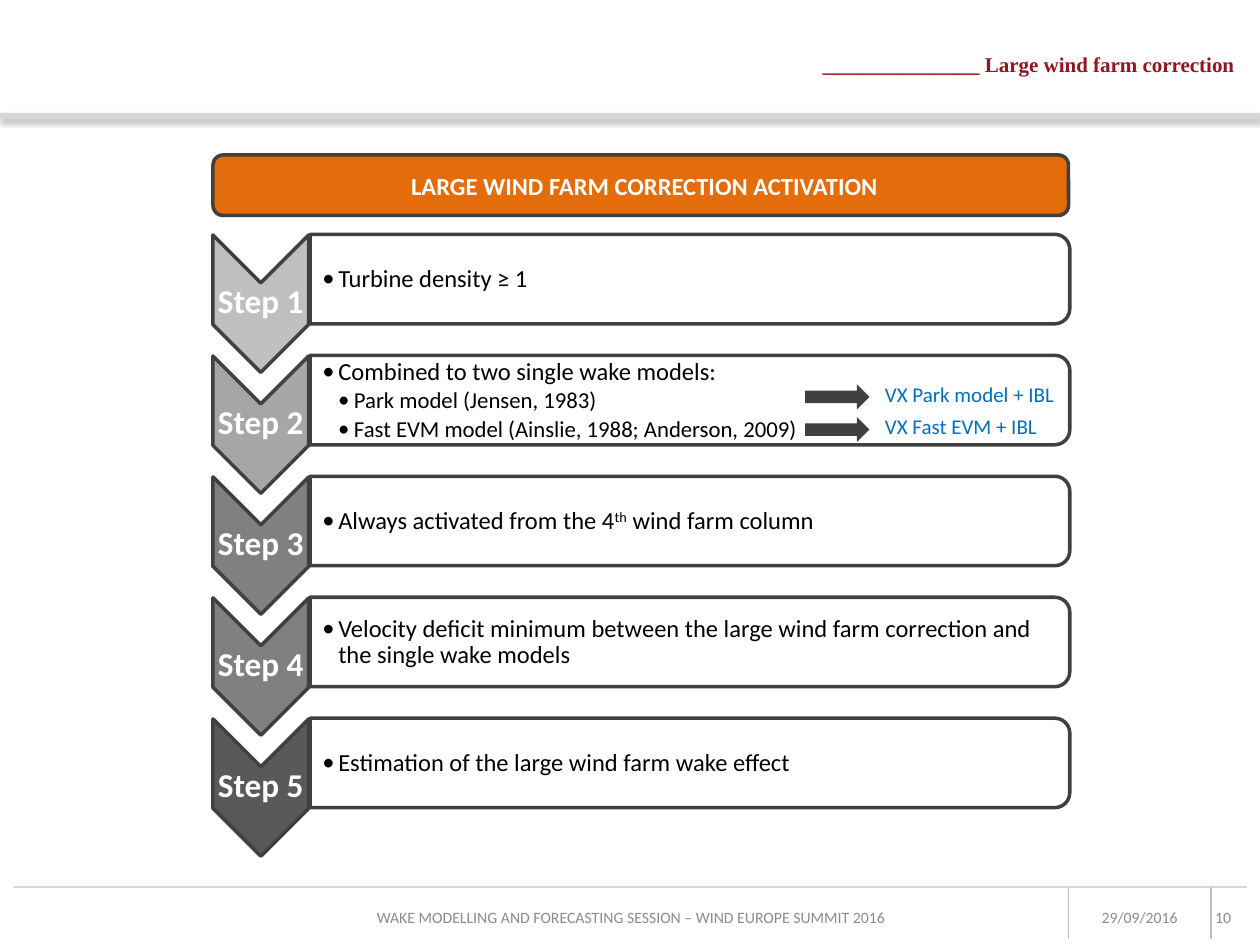
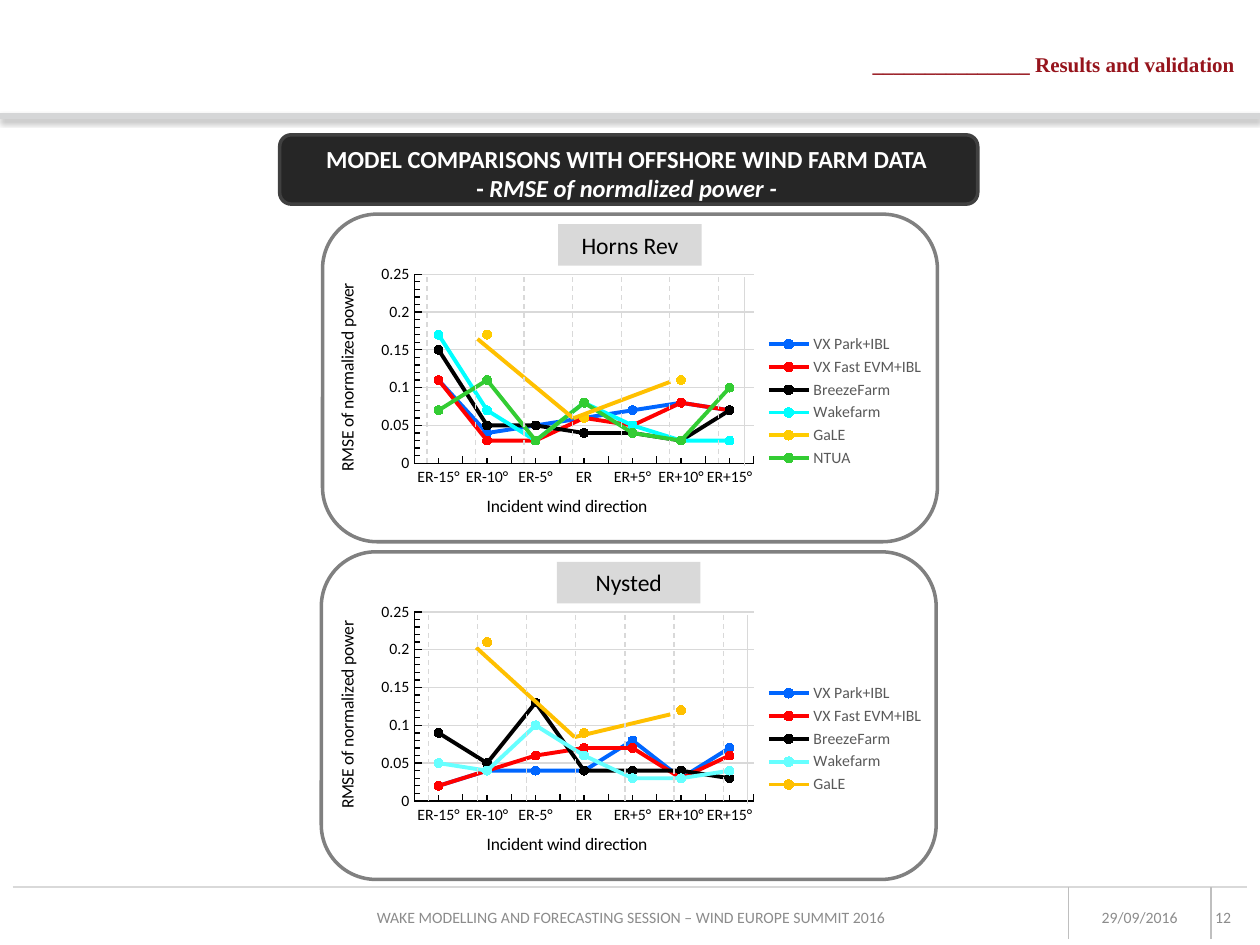
import pptx
import pptx.chart.data
import pptx.dml.color
import pptx.enum.chart
import pptx.enum.dml
import pptx.enum.shapes
import pptx.enum.text
import pptx.oxml
import pptx.oxml.ns
import pptx.util
from lxml import etree

Pt = pptx.util.Pt
RGB = pptx.dml.color.RGBColor.from_string
qn = pptx.oxml.ns.qn
SHAPES = pptx.enum.shapes.MSO_SHAPE
ALIGN = pptx.enum.text.PP_ALIGN
ANCHOR = pptx.enum.text.MSO_ANCHOR
TICKS = pptx.enum.chart.XL_TICK_MARK

COLORS = {
    "band": "D5D6D7", "rule": "D9D9D9", "divider": "BFBFBF", "footer": "8C8C8C",
    "heading": "96141C", "orange": "E46C0A", "edge": "404040", "dark": "262626",
    "white": "FFFFFF", "black": "000000", "blue": "0070C0", "frame": "808080",
    "legend": "595959", "amber": "FFC000",
}

deck = pptx.Presentation()
deck.slide_width = pptx.util.Inches(10)
deck.slide_height = pptx.util.Inches(7.5)
COL = deck.slide_width / 100
ROW = deck.slide_height / 75


def add_box(slide, kind, box, fill=None, edge=None, text="", size=14, color="black",
            bold=False, font="Calibri", align=ALIGN.CENTER, anchor=ANCHOR.TOP, inset=None):
    left, top, width, height = box
    place = [int(left * COL), int(top * ROW), int(width * COL), int(height * ROW)]
    if kind is None:
        shape = slide.shapes.add_textbox(*place)
    else:
        shape = slide.shapes.add_shape(kind, *place)
        shape.shadow.inherit = False
        if fill:
            shape.fill.solid()
            shape.fill.fore_color.rgb = RGB(fill)
        else:
            shape.fill.background()
        if edge:
            shape.line.color.rgb = RGB(edge)
            shape.line.width = Pt(2)
        else:
            shape.line.fill.background()
    frame = shape.text_frame
    frame.word_wrap = True
    frame.vertical_anchor = anchor
    if inset is not None:
        frame.margin_left = frame.margin_right = int(inset * COL)
        frame.margin_top = frame.margin_bottom = int(inset * ROW)
    if text:
        frame.text = text
        for paragraph in frame.paragraphs:
            paragraph.alignment = align
            paragraph.font.name = font
            paragraph.font.size = Pt(size)
            paragraph.font.bold = bold
            paragraph.font.color.rgb = RGB(COLORS[color])
    return shape


def add_line(slide, x1, y1, x2, y2, color, weight, dashed=False):
    line = slide.shapes.add_connector(
        pptx.enum.shapes.MSO_CONNECTOR.STRAIGHT,
        int(x1 * COL), int(y1 * ROW), int(x2 * COL), int(y2 * ROW))
    line.line.color.rgb = RGB(COLORS[color])
    line.line.width = Pt(weight)
    if dashed:
        line.line.dash_style = pptx.enum.dml.MSO_LINE.DASH
    return etree.SubElement(line._element.spPr, qn("a:effectLst"))


slides = []
for heading, number in [("Large wind farm correction", "10"), ("Results and validation", "12")]:
    slide = deck.slides.add_slide(deck.slide_layouts[6])
    slides.append(slide)
    effects = add_line(slide, 0, 9.2, 100, 9.2, "band", 3)
    shadow = etree.SubElement(effects, qn("a:outerShdw"), blurRad=str(Pt(3.1)),
                              dist=str(Pt(1.8)), dir="5400000", rotWithShape="0")
    tint = etree.SubElement(shadow, qn("a:srgbClr"), val=COLORS["black"])
    etree.SubElement(tint, qn("a:alpha"), val="35000")
    add_line(slide, 1, 70.4, 99, 70.4, "rule", 1)
    for divider in (84.8, 96.1):
        add_line(slide, divider, 70.4, divider, 74.5, "divider", 1)
    for text, left, width, align in [
        ("WAKE MODELLING AND FORECASTING SESSION – WIND EUROPE SUMMIT 2016", 28.2, 43.7, ALIGN.CENTER),
        ("29/09/2016", 86, 8.9, ALIGN.CENTER),
        (number, 95.1, 3.6, ALIGN.RIGHT),
    ]:
        add_box(slide, None, (left, 71.3, width, 3), text=text, size=9, color="footer",
                align=align, anchor=ANCHOR.MIDDLE)
    add_box(slide, None, (51.2, 3.6, 47.8, 3), text="_" * 15 + " " + heading, size=12,
            color="heading", bold=True, font="Times New Roman", align=ALIGN.RIGHT)

correction, results = slides

add_box(correction, SHAPES.ROUNDED_RECTANGLE, (16.9, 12.3, 67.9, 4.8), COLORS["orange"], COLORS["edge"])
add_box(correction, SHAPES.RECTANGLE, (18.2, 13.1, 65.9, 3.4), COLORS["orange"],
        text="LARGE WIND FARM CORRECTION ACTIVATION", color="white", bold=True)

steps = [
    ("BFBFBF", ["Turbine density ≥ 1"]),
    ("A6A6A6", ["Combined to two single wake models:", "Park model (Jensen, 1983)",
                "Fast EVM model (Ainslie, 1988; Anderson, 2009)"]),
    ("808080", ["Always activated from the 4^th^ wind farm column"]),
    ("808080", ["Velocity deficit minimum between the large wind farm correction and the single wake models"]),
    ("595959", ["Estimation of the large wind farm wake effect"]),
]
for index, (shade, points) in enumerate(steps):
    top = 18.6 + 9.6 * index
    chevron = add_box(correction, SHAPES.CHEVRON, (15.25, top + 1.7, 10.9, 7.6), shade, COLORS["edge"])
    chevron.rotation = 90
    add_box(correction, None, (16.9, top + 3.6, 7.6, 3.3), text=f"Step {index + 1}", size=19,
            color="white", bold=True, anchor=ANCHOR.MIDDLE, inset=0.1)
    panel = add_box(correction, SHAPES.ROUND_2_SAME_RECTANGLE, (51.2, top - 26.6, 7.1, 60.3),
                    COLORS["white"], COLORS["edge"])
    panel.rotation = 90
    body = add_box(correction, None, (24.5, top + 0.4, 60, 6.4), anchor=ANCHOR.MIDDLE, inset=0.1).text_frame
    body.margin_left = int(1.1 * COL)
    for depth, point in enumerate(points):
        nested = depth > 0
        paragraph = body.add_paragraph() if nested else body.paragraphs[0]
        paragraph.line_spacing = 0.9
        paragraph.space_after = Pt(2)
        props = paragraph._p.get_or_add_pPr()
        props.set("marL", str(int((2.5 if nested else 1.25) * COL)))
        props.set("indent", str(int(-1.25 * COL)))
        etree.SubElement(props, qn("a:buFont"), typeface="Calibri")
        etree.SubElement(props, qn("a:buChar"), char="•")
        paragraph.font.name = "Calibri"
        paragraph.font.size = Pt(13 if nested else 14)
        paragraph.font.color.rgb = RGB(COLORS["black"])
        for part, words in enumerate(point.split("^")):
            run = paragraph.add_run()
            run.text = words
            if part == 1:
                run.font._element.set("baseline", "30000")

for index, combined in enumerate(["VX Park model + IBL", "VX Fast EVM + IBL"]):
    add_box(correction, SHAPES.RIGHT_ARROW, (63.9, 30.5 + 2.6 * index, 5.1, 2), COLORS["edge"])
    add_box(correction, None, (69.25, 29.8 + 2.5 * index, 16.9, 3), text=combined, size=12,
            color="blue", align=ALIGN.LEFT)

add_box(results, SHAPES.ROUNDED_RECTANGLE, (22.2, 10.7, 55.4, 5.5), COLORS["dark"], COLORS["edge"])
banner = add_box(results, None, (22.9, 10.9, 53.7, 5.7),
                 text="MODEL COMPARISONS WITH OFFSHORE WIND FARM DATA\n- ", color="white", bold=True)
measure = banner.text_frame.paragraphs[1].add_run()
measure.text = "RMSE of normalized power -"
measure.font.italic = True

directions = ["ER-15°", "ER-10°", "ER-5°", "ER", "ER+5°", "ER+10°", "ER+15°"]
farms = [
    {
        "name": "Horns Rev", "top": 17, "left": 25.6, "first": 33.9, "step": 3.85, "end": 59.1,
        "legend": (0.71, 0.25, 0.27, 0.5),
        "trend": [(37.9, 26.9), (45.5, 33.2), (53.2, 30.3)],
        "series": [
            ("VX Park+IBL", "0066FF", [0.11, 0.04, 0.05, 0.06, 0.07, 0.08, 0.07]),
            ("VX Fast EVM+IBL", "FF0000", [0.11, 0.03, 0.03, 0.06, 0.05, 0.08, 0.07]),
            ("BreezeFarm", "000000", [0.15, 0.05, 0.05, 0.04, 0.04, 0.03, 0.07]),
            ("Wakefarm", "00FFFF", [0.17, 0.07, 0.03, 0.08, 0.05, 0.03, 0.03]),
            ("GaLE", "FFCC00", [None, 0.17, None, 0.06, None, 0.11, None]),
            ("NTUA", "33CC33", [0.07, 0.11, 0.03, 0.08, 0.04, 0.03, 0.1]),
        ],
    },
    {
        "name": "Nysted", "top": 43.8, "left": 25.5, "first": 34, "step": 3.9, "end": 59.3,
        "legend": (0.71, 0.29, 0.27, 0.42),
        "trend": [(37.8, 51.4), (45.6, 58.5), (53.2, 56.7)],
        "series": [
            ("VX Park+IBL", "0066FF", [0.02, 0.04, 0.04, 0.04, 0.08, 0.03, 0.07]),
            ("VX Fast EVM+IBL", "FF0000", [0.02, 0.04, 0.06, 0.07, 0.07, 0.03, 0.06]),
            ("BreezeFarm", "000000", [0.09, 0.05, 0.13, 0.04, 0.04, 0.04, 0.03]),
            ("Wakefarm", "66FFFF", [0.05, 0.04, 0.1, 0.06, 0.03, 0.03, 0.04]),
            ("GaLE", "FFC000", [None, 0.21, None, 0.09, None, 0.12, None]),
        ],
    },
]
for farm in farms:
    top = farm["top"]
    errors = pptx.chart.data.CategoryChartData()
    errors.categories = directions
    for model, _, values in farm["series"]:
        errors.add_series(model, values)
    chart = results.shapes.add_chart(
        pptx.enum.chart.XL_CHART_TYPE.LINE_MARKERS, int(24.9 * COL), int((top + 3.65) * ROW),
        int(49.9 * COL), int(22.4 * ROW), errors).chart
    chart.has_title = False
    chart.font.name = "Calibri"
    chart.font.size = Pt(10)
    chart.font.color.rgb = RGB(COLORS["black"])
    chart.plots[0].vary_by_categories = False
    for series, (_, color, _) in zip(chart.plots[0].series, farm["series"]):
        series.smooth = False
        series.format.line.color.rgb = RGB(color)
        series.format.line.width = Pt(2.25)
        series.marker.style = pptx.enum.chart.XL_MARKER_STYLE.CIRCLE
        series.marker.size = 5
        series.marker.format.fill.solid()
        series.marker.format.fill.fore_color.rgb = RGB(color)
        series.marker.format.line.color.rgb = RGB(color)

    for axis, caption in [(chart.category_axis, "Incident wind direction"),
                          (chart.value_axis, "RMSE of normalized power")]:
        axis.major_tick_mark = axis.minor_tick_mark = TICKS.INSIDE
        axis.tick_labels.font.size = Pt(9)
        axis.format.line.color.rgb = RGB(COLORS["black"])
        axis.format.line.width = Pt(0.75)
        axis.axis_title.text_frame.text = caption
        title_font = axis.axis_title.text_frame.paragraphs[0].font
        title_font.name = "Calibri"
        title_font.size = Pt(10)
        title_font.bold = False
        title_font.color.rgb = RGB(COLORS["black"])
    scale = chart.value_axis
    scale.minimum_scale, scale.maximum_scale = 0, 0.25
    scale.major_unit, scale.minor_unit = 0.05, 0.01
    scale.tick_labels.number_format = "General"
    scale.tick_labels.number_format_is_linked = False
    scale.major_gridlines.format.line.color.rgb = RGB(COLORS["rule"])
    scale.major_gridlines.format.line.width = Pt(0.75)
    chart.has_legend = True
    chart.legend.position = pptx.enum.chart.XL_LEGEND_POSITION.RIGHT
    chart.legend.include_in_layout = False
    chart.legend.font.size = Pt(9)
    chart.legend.font.color.rgb = RGB(COLORS["legend"])

    for part, index, shares in [
        (chart._chartSpace.chart.plotArea, 0, (0.16, 0.05, 0.54, 0.67)),
        (chart.legend._element, 1, farm["legend"]),
        (chart.category_axis.axis_title._element, 1, (0.27, 0.82)),
        (scale.axis_title._element, 1, (0.03, 0.07)),
    ]:
        for automatic in part.findall(qn("c:layout")):
            part.remove(automatic)
        layout = etree.Element(qn("c:layout"))
        part.insert(index, layout)
        manual = etree.SubElement(layout, qn("c:manualLayout"))
        if index == 0:
            etree.SubElement(manual, qn("c:layoutTarget"), val="inner")
        for mode in ("xMode", "yMode"):
            etree.SubElement(manual, qn("c:" + mode), val="edge")
        for side, share in zip("xywh", shares):
            etree.SubElement(manual, qn("c:" + side), val=str(share))

    add_box(results, SHAPES.RECTANGLE, (farm["left"] + 18.7, top + 0.8, 11.4, 3.3), COLORS["rule"],
            text=farm["name"], size=13.5)
    add_box(results, SHAPES.ROUNDED_RECTANGLE, (farm["left"], top, 48.8, 26), edge=COLORS["frame"])
    for start, stop in zip(farm["trend"], farm["trend"][1:]):
        add_line(results, *start, *stop, "amber", 2.25)
    for index in range(len(directions)):
        x = farm["first"] + farm["step"] * index
        add_line(results, x, top + 5, x, top + 20, "rule", 0.75, dashed=True)
    add_line(results, farm["end"], top + 5, farm["end"], top + 20, "rule", 0.75)

deck.save("out.pptx")
